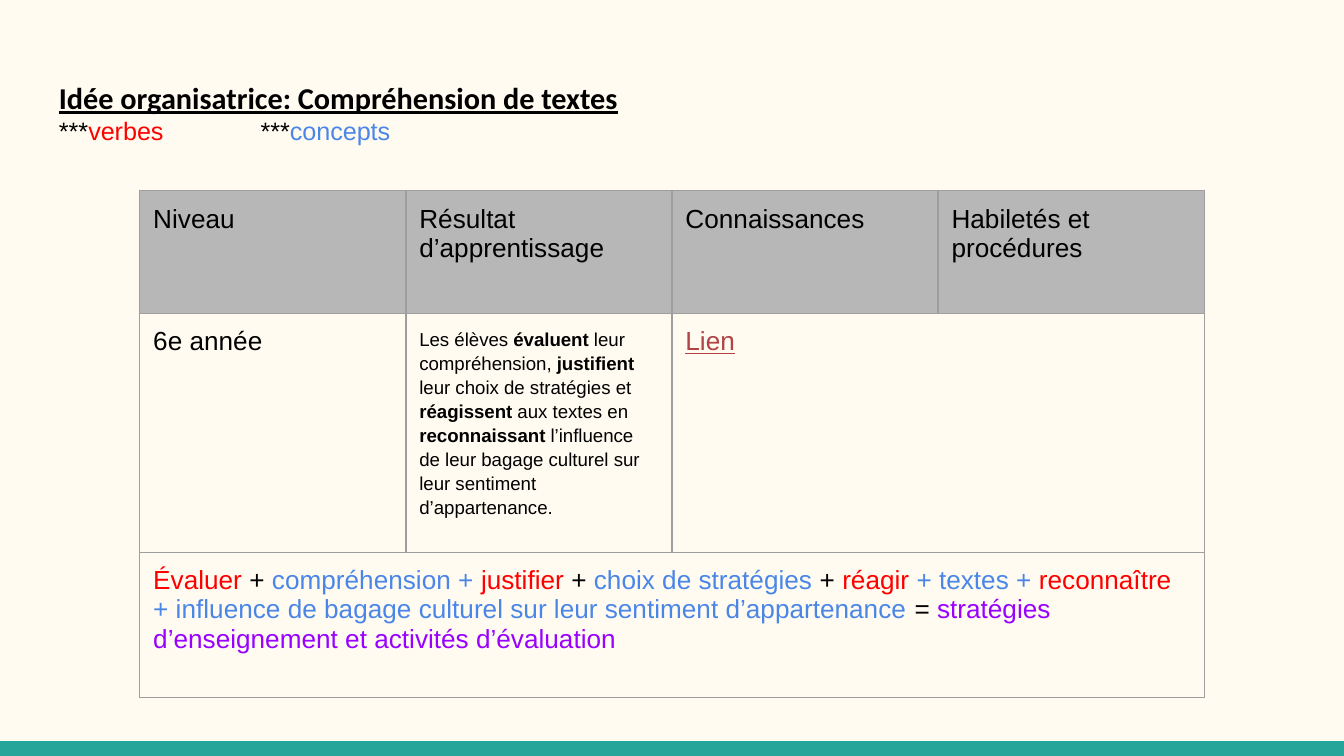
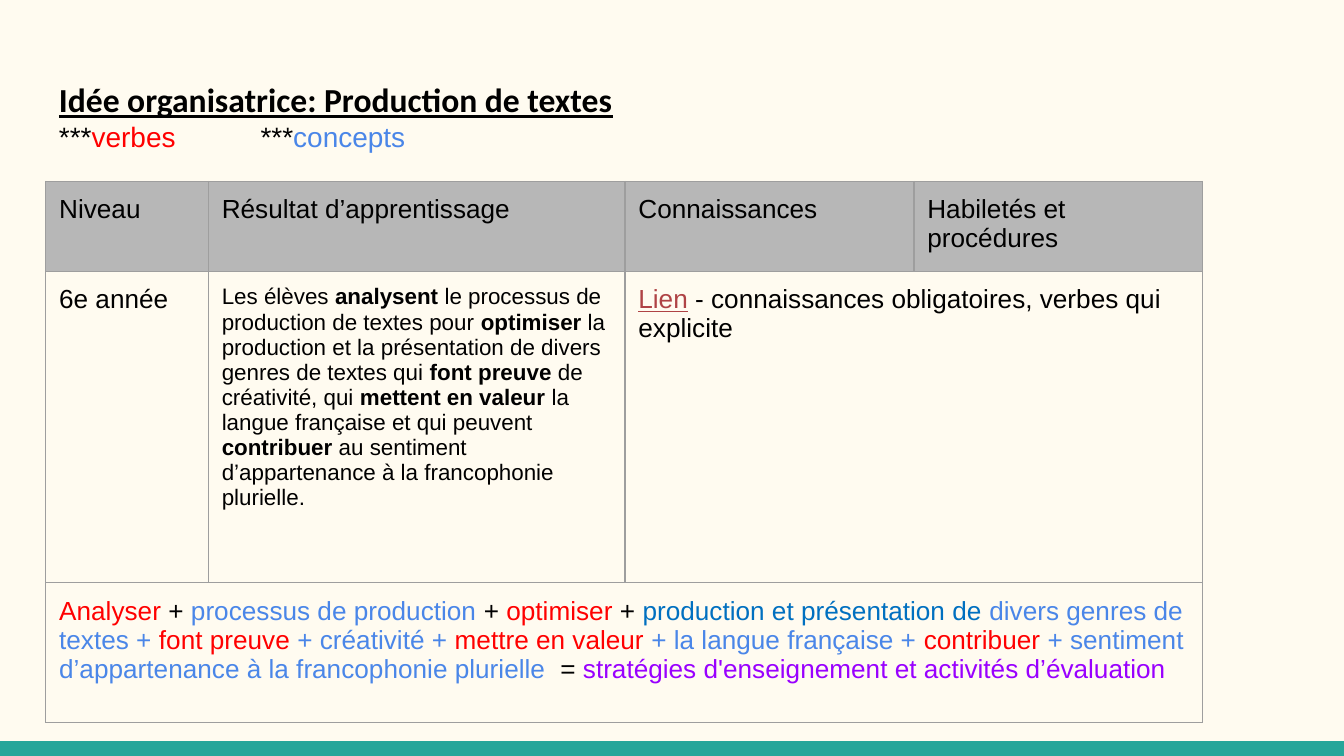
import pptx
import pptx.util
import pptx.dml.color
import pptx.enum.shapes
import pptx.oxml
import pptx.oxml.ns

Inches = pptx.util.Inches
Pt = pptx.util.Pt
RGBColor = pptx.dml.color.RGBColor

CREAM = RGBColor(0xFF, 0xFB, 0xF0)
TEAL = RGBColor(0x26, 0xA6, 0x9A)
GREY = RGBColor(0xB7, 0xB7, 0xB7)
BORDER = RGBColor(0x9E, 0x9E, 0x9E)
BLACK = RGBColor(0x00, 0x00, 0x00)
VERB = RGBColor(0xFF, 0x00, 0x00)
CONCEPT = RGBColor(0x4A, 0x86, 0xE8)
DEEP_BLUE = RGBColor(0x00, 0x70, 0xC0)
STRATEGY = RGBColor(0x99, 0x00, 0xFF)
LINK = RGBColor(0xAF, 0x43, 0x45)

WIDTH, HEIGHT = 10, 5.625
BAND_HEIGHT = 0.11
MARGIN = 0.34
INSET = 0.1
BODY_SIZE = 14

HEADERS = ["Niveau", "Résultat d’apprentissage", "Connaissances", "Habiletés et procédures"]
LEVEL = "6e année"
LEGEND = [("***", BLACK), ("verbes", VERB), ("\t\t***", BLACK), ("concepts", CONCEPT)]

SLIDES = [
    {
        "title": "Idée organisatrice: Compréhension de textes",
        "title_size": 16.2,
        "legend_size": 13.5,
        "origin": (1.04, 1.42),
        "columns": [1.98] * 4,
        "rows": [0.91, 1.78, 1.08],
        "outcome_size": 10,
        "outcome_spacing": 1.15,
        "outcome": [
            "Les élèves ", "évaluent", " leur compréhension, ", "justifient",
            " leur choix de stratégies et ", "réagissent", " aux textes en ", "reconnaissant",
            " l’influence de leur bagage culturel sur leur sentiment d’appartenance.",
        ],
        "link_note": "",
        "formula": [
            ("Évaluer ", VERB), ("+ ", BLACK), ("compréhension + ", CONCEPT),
            ("justifier", VERB), (" + ", BLACK), ("choix de stratégies ", CONCEPT),
            ("+ ", BLACK), ("réagir ", VERB), ("+ textes + ", CONCEPT), ("reconnaître", VERB),
            (" + influence de bagage culturel sur leur sentiment d’appartenance ", CONCEPT),
            ("= ", BLACK), ("stratégies d’enseignement et activités d’évaluation", STRATEGY),
        ],
    },
    {
        "title": "Idée organisatrice: Production de textes",
        "title_size": 18,
        "legend_size": 15,
        "origin": (MARGIN, 1.35),
        "columns": [1.21, 3.1, 2.15, 2.15],
        "rows": [0.63, 2.32, 1.04],
        "outcome_size": 12,
        "outcome_spacing": 1.0,
        "outcome": [
            "Les élèves ", "analysent", " le processus de production de textes pour ",
            "optimiser", " la production et la présentation de divers genres de textes qui ",
            "font preuve", " de créativité, qui ", "mettent en valeur",
            " la langue française et qui peuvent ", "contribuer",
            " au sentiment d’appartenance à la francophonie plurielle.",
        ],
        "link_note": " - connaissances obligatoires, verbes qui explicite",
        "formula": [
            ("Analyser ", VERB), ("+", BLACK), (" processus de production", CONCEPT),
            (" + ", BLACK), ("optimiser ", VERB), ("+ ", BLACK),
            ("production et présentation de ", DEEP_BLUE),
            ("divers genres de textes + ", CONCEPT), ("font preuve ", VERB),
            ("+ créativité + ", CONCEPT), ("mettre en valeur ", VERB),
            ("+ la langue française + ", CONCEPT), ("contribuer ", VERB),
            ("+ sentiment d’appartenance à la francophonie plurielle ", CONCEPT),
            (" = ", BLACK), ("stratégies d'enseignement et activités d’évaluation", STRATEGY),
        ],
    },
]


def add_run(paragraph, text, size=BODY_SIZE, color=BLACK, bold=False, underline=False, font="Arial"):
    run = paragraph.add_run()
    run.text = text
    run.font.name = font
    run.font.size = Pt(size)
    run.font.color.rgb = color
    run.font.bold = bold
    run.font.underline = underline


def add_colored_runs(paragraph, runs, size=BODY_SIZE):
    for text, color in runs:
        add_run(paragraph, text, size, color)


def set_margins(target):
    for side in ("left", "right", "top", "bottom"):
        setattr(target, f"margin_{side}", Inches(INSET))


def set_borders(cell):
    properties = cell._tc.get_or_add_tcPr()
    for position, side in enumerate(("lnL", "lnR", "lnT", "lnB")):
        line = pptx.oxml.parse_xml(
            f'<a:{side} {pptx.oxml.ns.nsdecls("a")} w="{Pt(0.75)}"><a:solidFill>'
            f'<a:srgbClr val="{BORDER}"/></a:solidFill></a:{side}>'
        )
        properties.insert(position, line)


def add_band(slide):
    band = slide.shapes.add_shape(
        pptx.enum.shapes.MSO_SHAPE.RECTANGLE,
        0, Inches(HEIGHT - BAND_HEIGHT), Inches(WIDTH), Inches(BAND_HEIGHT),
    )
    band.shadow.inherit = False
    band.fill.solid()
    band.fill.fore_color.rgb = TEAL
    band.line.fill.background()


def add_heading(slide, content):
    box = slide.shapes.add_textbox(
        Inches(MARGIN), Inches(0.49), Inches(WIDTH - 2 * MARGIN), Inches(0.67)
    )
    frame = box.text_frame
    frame.word_wrap = True
    set_margins(frame)
    add_run(frame.paragraphs[0], content["title"], content["title_size"],
            bold=True, underline=True, font="Calibri")
    add_colored_runs(frame.add_paragraph(), LEGEND, content["legend_size"])


def add_outcome_table(slide, content):
    columns, rows = content["columns"], content["rows"]
    left, top = content["origin"]
    table = slide.shapes.add_table(
        len(rows), len(columns), Inches(left), Inches(top), Inches(sum(columns)), Inches(sum(rows))
    ).table
    table.first_row = False
    table.horz_banding = False
    for column, width in zip(table.columns, columns):
        column.width = Inches(width)
    for row, height in zip(table.rows, rows):
        row.height = Inches(height)

    for index, cell in enumerate(table.iter_cells()):
        set_margins(cell)
        if index < len(columns):
            cell.fill.solid()
            cell.fill.fore_color.rgb = GREY
        else:
            cell.fill.background()
        set_borders(cell)
    table.cell(1, 2).merge(table.cell(1, 3))
    table.cell(2, 0).merge(table.cell(2, 3))

    def first_paragraph(row, column):
        return table.cell(row, column).text_frame.paragraphs[0]

    for column, header in enumerate(HEADERS):
        add_run(first_paragraph(0, column), header)
    add_run(first_paragraph(1, 0), LEVEL)

    outcome = first_paragraph(1, 1)
    outcome.line_spacing = content["outcome_spacing"]
    for position, text in enumerate(content["outcome"]):
        add_run(outcome, text, content["outcome_size"], bold=position % 2 == 1)

    link = first_paragraph(1, 2)
    add_run(link, "Lien", color=LINK, underline=True)
    if content["link_note"]:
        add_run(link, content["link_note"])
    add_colored_runs(first_paragraph(2, 0), content["formula"])


def main():
    presentation = pptx.Presentation()
    presentation.slide_width = Inches(WIDTH)
    presentation.slide_height = Inches(HEIGHT)
    background = presentation.slide_master.background.fill
    background.solid()
    background.fore_color.rgb = CREAM
    for content in SLIDES:
        slide = presentation.slides.add_slide(presentation.slide_layouts[6])
        add_band(slide)
        add_heading(slide, content)
        add_outcome_table(slide, content)
    presentation.save("out.pptx")


if __name__ == "__main__":
    main()
